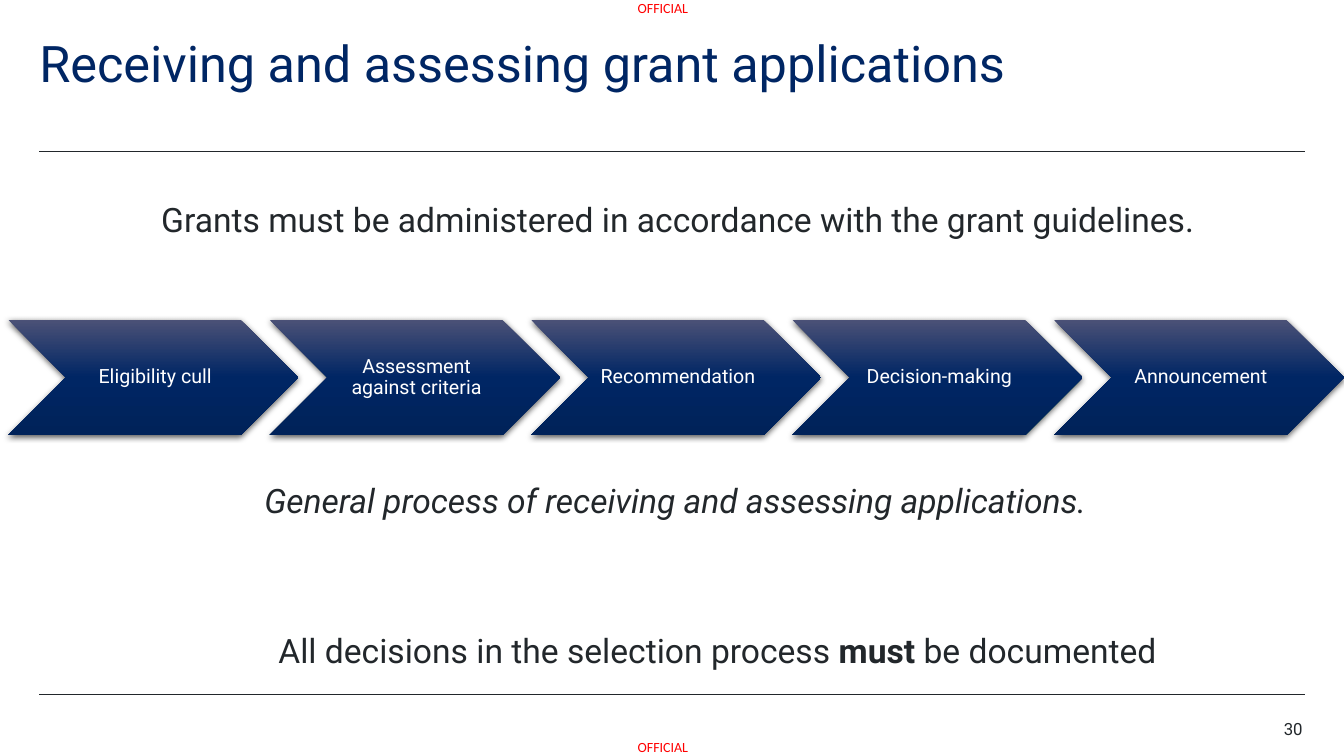
from lxml.etree import SubElement
from pptx import Presentation
from pptx.dml.color import RGBColor
from pptx.enum.shapes import MSO_CONNECTOR as Connector, MSO_SHAPE as Shape
from pptx.enum.text import MSO_ANCHOR as Anchor, PP_ALIGN as Align
from pptx.oxml.ns import qn
from pptx.util import Inches, Pt

COLOURS = {
    "navy": "002664",
    "ink": "22272B",
    "marking": "FF0000",
    "white": "FFFFFF",
    "shadow": "000000",
    "step_top": "4B5177",
    "step_bottom": "002259",
}


class GrantSlide:
    font = "Roboto"
    step_gradient = ((0, "step_top"), (50, "navy"), (100, "step_bottom"))

    def __init__(self, deck):
        self.slide = deck.slides.add_slide(deck.slide_layouts[6])

    def rgb(self, colour):
        return RGBColor.from_string(COLOURS[colour])

    def fill_text(self, frame, runs, size, colour, align, font=None,
                  insets=(0, 0, 0, 0), wrap=True, spacing=None):
        frame.word_wrap = wrap
        (frame.margin_left, frame.margin_top,
         frame.margin_right, frame.margin_bottom) = map(Inches, insets)
        paragraph = frame.paragraphs[0]
        paragraph.alignment = align
        paragraph.line_spacing = spacing
        for words, style in runs:
            run = paragraph.add_run()
            run.text = words
            run.font.name = font or self.font
            run.font.size = Pt(size)
            run.font.color.rgb = self.rgb(colour)
            run.font.bold = style == "bold"
            run.font.italic = style == "italic"

    def text(self, box, runs, size, colour="ink", align=Align.LEFT, **layout):
        field = self.slide.shapes.add_textbox(*map(Inches, box))
        self.fill_text(field.text_frame, runs, size, colour, align, **layout)

    def statement(self, box, runs, align=Align.CENTER):
        self.text(box, runs, 24, align=align, insets=(0.1, 0.05, 0.1, 0.05))

    def marking(self, top):
        self.text((6.31, top, 0.53, 0.17), [("OFFICIAL", "")], 10, "marking",
                  Align.CENTER, font="Calibri", wrap=False)

    def rule(self, top):
        rule = self.slide.shapes.add_connector(
            Connector.STRAIGHT, Inches(0.39), Inches(top), Inches(12.94), Inches(top))
        rule.line.color.rgb = self.rgb("ink")
        rule.line.width = Pt(0.5)
        SubElement(rule._element.spPr, qn("a:effectLst"))

    def step(self, left, label):
        chevron = self.slide.shapes.add_shape(
            Shape.CHEVRON, *map(Inches, (left, 3.17, 2.88, 1.15)))
        chevron.line.fill.background()
        self.shade(chevron)
        self.cast_shadow(chevron)
        chevron.text_frame.vertical_anchor = Anchor.MIDDLE
        self.fill_text(chevron.text_frame, [(label, "")], 14, "white", Align.CENTER,
                       insets=(0.06, 0.02, 0.02, 0.02), spacing=0.9)

    def shade(self, chevron):
        chevron.fill.gradient()
        chevron.fill.gradient_angle = 270
        stops = chevron._element.spPr.find(qn("a:gradFill")).find(qn("a:gsLst"))
        for stop in list(stops):
            stops.remove(stop)
        for percent, colour in self.step_gradient:
            stop = SubElement(stops, qn("a:gs"), pos=str(percent * 1000))
            SubElement(stop, qn("a:srgbClr"), val=COLOURS[colour])

    def cast_shadow(self, chevron):
        chevron.shadow.inherit = False
        effects = chevron._element.spPr.find(qn("a:effectLst"))
        shadow = SubElement(effects, qn("a:outerShdw"), blurRad=str(Pt(4.5)),
                            dist=str(Pt(1.5)), dir="5400000", algn="ctr",
                            rotWithShape="0")
        tint = SubElement(shadow, qn("a:srgbClr"), val=COLOURS["shadow"])
        SubElement(tint, qn("a:alpha"), val="63000")


def main():
    deck = Presentation()
    deck.slide_width, deck.slide_height = Inches(13.33), Inches(7.5)
    page = GrantSlide(deck)

    for top in (0, 7.33):
        page.marking(top)
    for top in (1.5, 6.89):
        page.rule(top)

    page.text((0.39, 0.39, 10.63, 1.1),
              [("Receiving and assessing grant applications", "")],
              36, "navy", spacing=0.9)
    page.statement(
        (1.5, 1.92, 11.98, 0.5),
        [("Grants must be administered in accordance with the grant guidelines.", "")],
        Align.LEFT)

    process = ("Eligibility cull", "Assessment against criteria", "Recommendation",
               "Decision-making", "Announcement")
    first, last = 0.08, 10.45
    pitch = (last - first) / (len(process) - 1)
    for position, label in enumerate(process):
        page.step(first + position * pitch, label)

    page.statement(
        (0.71, 4.71, 11.98, 0.5),
        [("General process of receiving and assessing applications.", "italic")])
    page.statement(
        (1.32, 6.2, 11.59, 0.5),
        [("All decisions in the selection process ", ""), ("must", "bold"),
         (" be documented", "")])
    page.text((12.38, 7.13, 0.54, 0.2), [("30", "")], 12, align=Align.RIGHT)

    deck.save("out.pptx")


if __name__ == "__main__":
    main()
